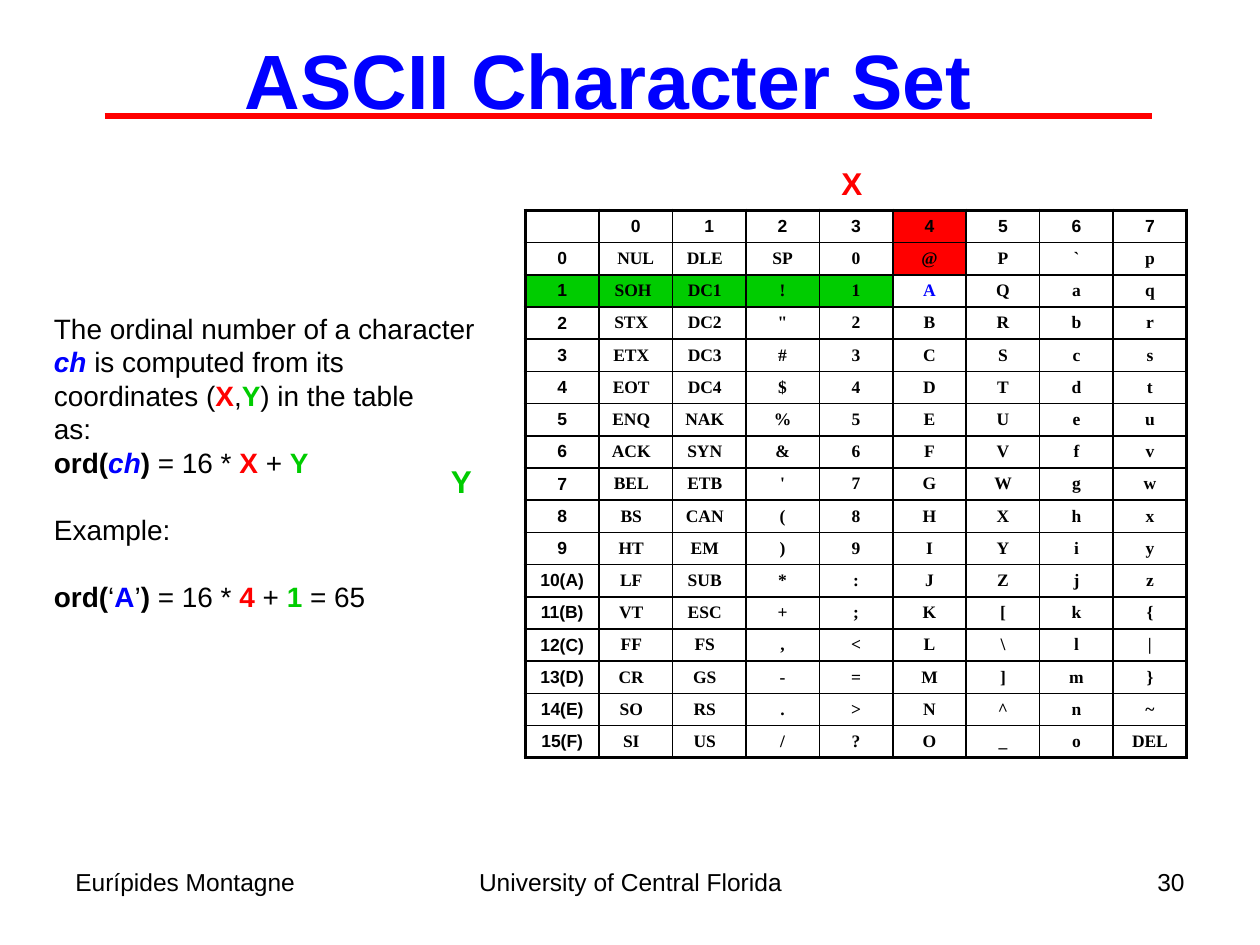
from lxml.etree import SubElement
from pptx import Presentation
from pptx.dml.color import RGBColor
from pptx.enum.shapes import MSO_CONNECTOR
from pptx.enum.text import MSO_ANCHOR, PP_ALIGN
from pptx.oxml.ns import qn
from pptx.util import Inches, Pt

BLACK, WHITE, BLUE, RED, GREEN = "000000", "FFFFFF", "0000FF", "FF0000", "00CC00"
CONTROL_NAMES = (
    "NUL SOH STX ETX EOT ENQ ACK BEL BS HT LF VT FF CR SO SI "
    "DLE DC1 DC2 DC3 DC4 NAK SYN ETB CAN EM SUB ESC FS GS RS US"
).split()
SPECIAL_NAMES = {**dict(enumerate(CONTROL_NAMES)), 32: "SP", 127: "DEL"}
ROW_COUNT, COLUMN_COUNT = 17, 9
EXAMPLE_ROW, EXAMPLE_COLUMN = 2, 5


def color(value):
    """Turn a hex string into a colour."""
    return RGBColor.from_string(value)


def add_run(paragraph, text, size=16, font="Arial", fill=BLACK, bold=False, italic=False):
    """Add formatted text to a paragraph."""
    run = paragraph.add_run()
    run.text = text
    run.font.size = Pt(size)
    run.font.name = font
    run.font.bold = bold
    run.font.italic = italic
    run.font.color.rgb = color(fill)


def cell_text(row, column):
    """Return the label or character for a table position."""
    if row == 0:
        return str(column - 1) if column else ""
    y = row - 1
    if column == 0:
        return f"{y}({y:X})" if y > 9 else str(y)
    code = 16 * (column - 1) + y
    return SPECIAL_NAMES.get(code, chr(code))


def cell_fill(row, column):
    """Return the fill that leads to the example character."""
    if column == EXAMPLE_COLUMN and row < EXAMPLE_ROW:
        return RED
    if row == EXAMPLE_ROW and column < EXAMPLE_COLUMN:
        return GREEN
    return WHITE


def right_margin(row, column):
    """Return the inset that shifts control names to the left."""
    if column not in (1, 2) or row == 0:
        return 0
    return {(1, 1): 0, (2, 1): 0.04}.get((row, column), 0.07)


class SlideBuilder:
    """Hold the presentation style and the current slide."""

    def __init__(self):
        """Start a presentation with one title slide."""
        self.presentation = Presentation()
        self.presentation.slide_width = Inches(10)
        self.presentation.slide_height = Inches(7.5)
        self.slide = self.presentation.slides.add_slide(self.presentation.slide_layouts[5])

    def title(self, text, left, top, width, height):
        """Place the title."""
        shape = self.slide.shapes.title
        shape.left, shape.top = Inches(left), Inches(top)
        shape.width, shape.height = Inches(width), Inches(height)
        shape.text_frame.vertical_anchor = MSO_ANCHOR.MIDDLE
        paragraph = shape.text_frame.paragraphs[0]
        paragraph.alignment = PP_ALIGN.CENTER
        add_run(paragraph, text, size=44, fill=BLUE, bold=True)

    def text(self, text, left, top, width, height, align=PP_ALIGN.LEFT, wrap=True, **style):
        """Add a one-line text box."""
        box = self.slide.shapes.add_textbox(Inches(left), Inches(top), Inches(width), Inches(height))
        box.text_frame.word_wrap = wrap
        paragraph = box.text_frame.paragraphs[0]
        paragraph.alignment = align
        add_run(paragraph, text, **style)

    def explanation(self, lines, left, top, width, height, line_height=19.2):
        """Add a text box of mixed runs, with a gap before marked lines."""
        box = self.slide.shapes.add_textbox(Inches(left), Inches(top), Inches(width), Inches(height))
        frame = box.text_frame
        frame.word_wrap = False
        for index, (has_gap, runs) in enumerate(lines):
            paragraph = frame.add_paragraph() if index else frame.paragraphs[0]
            paragraph.line_spacing = Pt(line_height)
            paragraph.space_before = Pt(line_height if has_gap else 0)
            for text, style in runs:
                add_run(paragraph, text, **style)

    def line(self, start_x, start_y, end_x, end_y, fill, width):
        """Add a straight line."""
        connector = self.slide.shapes.add_connector(
            MSO_CONNECTOR.STRAIGHT, Inches(start_x), Inches(start_y), Inches(end_x), Inches(end_y)
        )
        connector.line.color.rgb = color(fill)
        connector.line.width = Pt(width)
        SubElement(connector._element.spPr, qn("a:effectLst"))

    def borders(self, cell, row, column):
        """Draw cell borders, thicker on the outside of the table."""
        outer_sides = {
            "L": column == 0,
            "R": column == COLUMN_COUNT - 1,
            "T": row == 0,
            "B": row == ROW_COUNT - 1,
        }
        properties = cell._tc.get_or_add_tcPr()
        for side, outer in outer_sides.items():
            border = SubElement(properties, qn(f"a:ln{side}"), w=str(Pt(2.25 if outer else 1)))
            SubElement(SubElement(border, qn("a:solidFill")), qn("a:srgbClr"), val=BLACK)

    def cell(self, cell, row, column):
        """Fill and format one cell of the character table."""
        self.borders(cell, row, column)
        cell.fill.solid()
        cell.fill.fore_color.rgb = color(cell_fill(row, column))
        cell.margin_left = cell.margin_top = cell.margin_bottom = 0
        cell.margin_right = Inches(right_margin(row, column))
        cell.vertical_anchor = MSO_ANCHOR.MIDDLE
        paragraph = cell.text_frame.paragraphs[0]
        paragraph.alignment = PP_ALIGN.CENTER
        text = cell_text(row, column)
        if not text:
            SubElement(paragraph._p, qn("a:endParaRPr"), sz="1000")
            return
        is_example = (row, column) == (EXAMPLE_ROW, EXAMPLE_COLUMN)
        add_run(
            paragraph,
            text,
            size=10,
            font="Times New Roman" if row and column else "Arial",
            fill=BLUE if is_example else BLACK,
            bold=True,
        )

    def character_table(self, left, top, width, height):
        """Add the table of all characters."""
        table = self.slide.shapes.add_table(
            ROW_COUNT, COLUMN_COUNT, Inches(left), Inches(top), Inches(width), Inches(height)
        ).table
        table.first_row = table.horz_banding = False
        for row in range(ROW_COUNT):
            for column in range(COLUMN_COUNT):
                self.cell(table.cell(row, column), row, column)


def main():
    """Build and save the slide."""
    plain, bold = {}, {"bold": True}
    red, green, blue = ({"fill": fill, "bold": True} for fill in (RED, GREEN, BLUE))
    variable = {**blue, "italic": True}
    lines = [
        (False, [("The ordinal number of a character", plain)]),
        (False, [("ch ", variable), ("is computed from its", plain)]),
        (False, [("coordinates (", plain), ("X", red), (",", plain), ("Y", green),
                 (") in the table", plain)]),
        (False, [("as:", plain)]),
        (False, [("ord(", bold), ("ch", variable), (")", bold), (" = 16 * ", plain),
                 ("X ", red), ("+ ", plain), ("Y", green)]),
        (True, [("Example:", plain)]),
        (True, [("ord(", bold), ("‘", plain), ("A", blue), ("’", plain), (")", bold),
                (" = 16 * ", plain), ("4", red), (" + ", plain), ("1", green), (" = 65", plain)]),
    ]
    builder = SlideBuilder()
    builder.text("Eurípides Montagne", 0.5, 6.83, 2.33, 0.52, size=14)
    builder.text("University of Central Florida", 3.42, 6.83, 3.17, 0.52, PP_ALIGN.CENTER, size=14)
    builder.text("30", 7.17, 6.83, 2.33, 0.52, PP_ALIGN.RIGHT, size=14)
    builder.title("ASCII Character Set", 0.33, 0, 9, 1.25)
    builder.character_table(4.17, 1.67, 5.25, 4.35)
    builder.line(0.83, 0.92, 9.14, 0.92, RED, 3)
    builder.explanation(lines, 0.33, 2.42, 3.55, 2.51)
    builder.text("Y", 3.48, 3.62, 0.37, 0.4, wrap=False, size=18, **green)
    builder.text("X", 6.58, 1.25, 0.37, 0.4, wrap=False, size=18, **red)
    builder.presentation.save("out.pptx")


if __name__ == "__main__":
    main()
